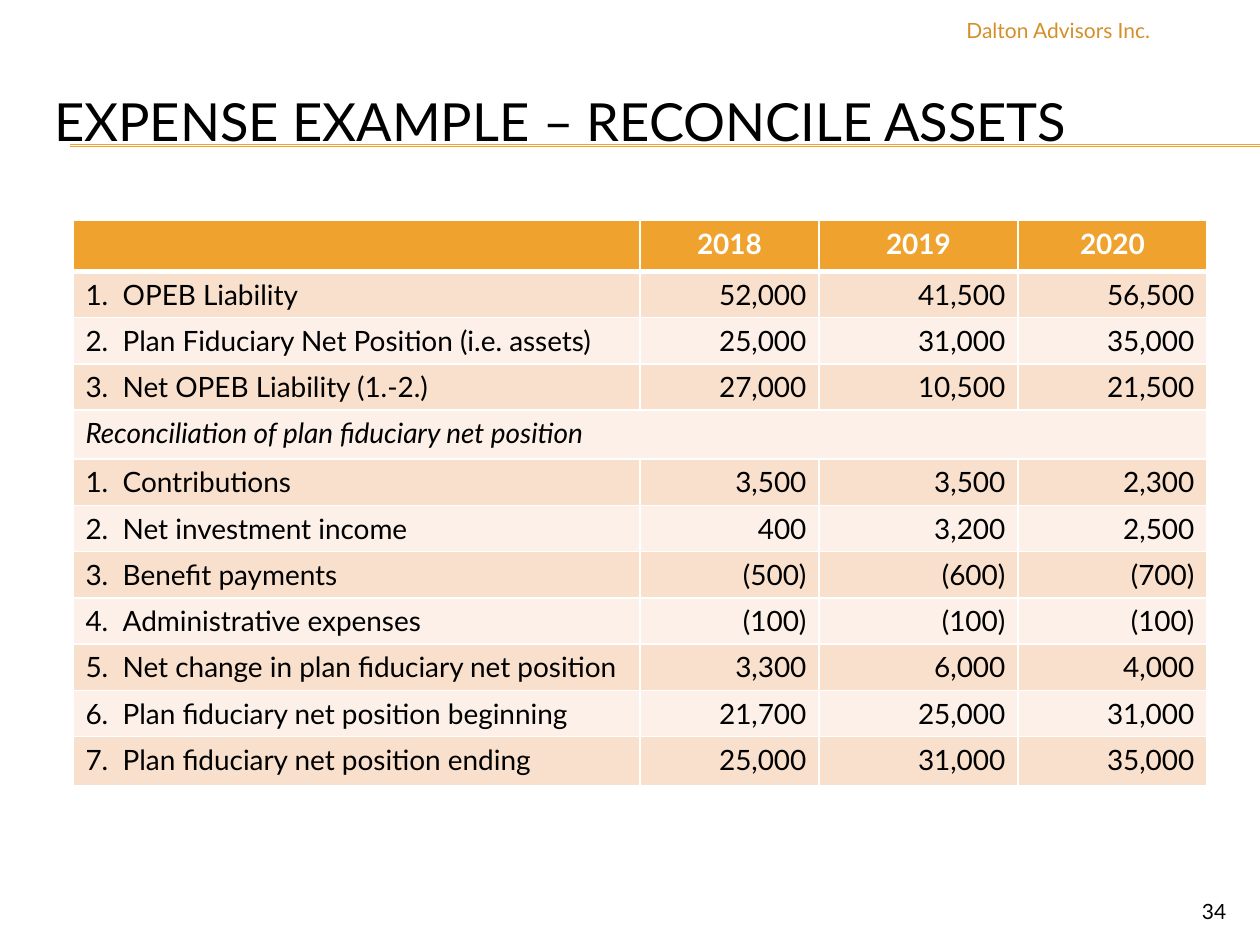
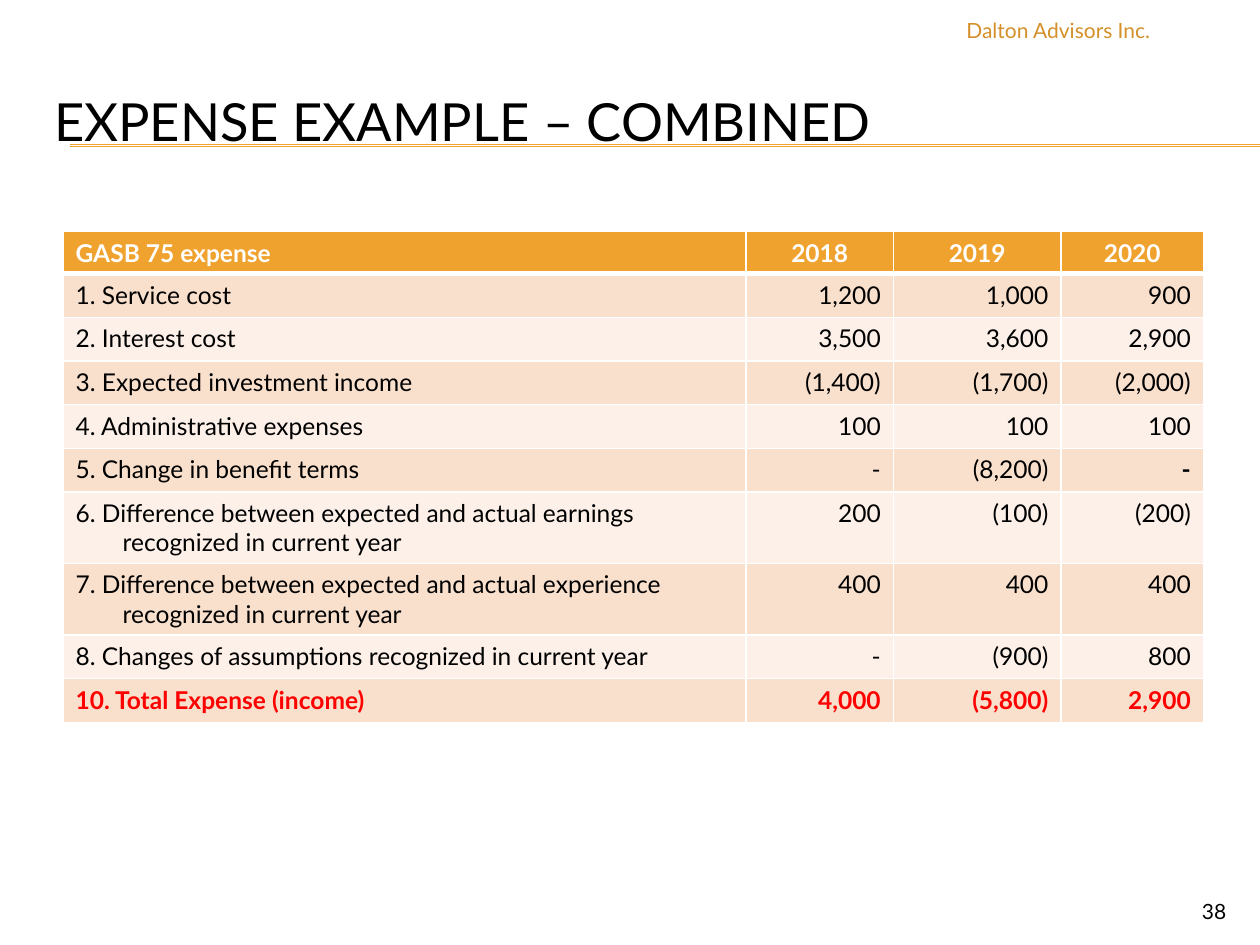
"""Builds two slides of expense example tables."""
from lxml import etree
from pptx import Presentation
from pptx.dml.color import RGBColor
from pptx.enum.shapes import MSO_CONNECTOR
from pptx.enum.text import MSO_ANCHOR, PP_ALIGN
from pptx.oxml.ns import qn
from pptx.util import Cm, Pt

LEFT, CENTER, RIGHT = PP_ALIGN.LEFT, PP_ALIGN.CENTER, PP_ALIGN.RIGHT
TOP, MIDDLE = MSO_ANCHOR.TOP, MSO_ANCHOR.MIDDLE
STRAIGHT = MSO_CONNECTOR.STRAIGHT

BLACK = RGBColor(0x00, 0x00, 0x00)
WHITE = RGBColor(0xFF, 0xFF, 0xFF)
RED = RGBColor(0xFF, 0x00, 0x00)
ORANGE = RGBColor(0xF0, 0xA2, 0x2E)
OCHRE = RGBColor(0xD4, 0x8F, 0x29)
BANDS = (RGBColor(0xF9, 0xE0, 0xCD), RGBColor(0xFC, 0xF0, 0xE8))

FONT = "Lato"
COMPANY = "Dalton Advisors Inc."
SLIDE_WIDTH, SLIDE_HEIGHT = 25.4, 19.05
RULE_LEFT, RULE_TOPS = 1.42, (2.92, 2.95)
TITLE_BOX = (0.84, 1.27, 24.13, 2.34)
COMPANY_BOX = (15.39, 0.23, 8.05, 0.81)
NUMBER_BOX = (22.86, 17.98, 2.11, 0.69)

SLIDES = [
    {
        "title": "EXPENSE EXAMPLE – RECONCILE ASSETS",
        "number": "34",
        "place": (1.47, 4.45),
        "columns": (11.43, 3.61, 4.01, 3.81),
        "row_height": 0.93,
        "special_heights": {0: 1.02, 4: 0.99, 11: 0.99},
        "size": 16,
        "hanging": 0.75,
        "rows": [
            ("", "2018", "2019", "2020"),
            ("1.\tOPEB Liability", "52,000", "41,500", "56,500"),
            ("2.\tPlan Fiduciary Net Position (i.e. assets)", "25,000", "31,000", "35,000"),
            ("3.\tNet OPEB Liability (1.-2.)", "27,000", "10,500", "21,500"),
            ("Reconciliation of plan fiduciary net position",),
            ("1.\tContributions", "3,500", "3,500", "2,300"),
            ("2.\tNet investment income", "400", "3,200", "2,500"),
            ("3.\tBenefit payments", "(500)", "(600)", "(700)"),
            ("4.\tAdministrative expenses", "(100)", "(100)", "(100)"),
            ("5.\tNet change in plan fiduciary net position", "3,300", "6,000", "4,000"),
            ("6.\tPlan fiduciary net position beginning", "21,700", "25,000", "31,000"),
            ("7.\tPlan fiduciary net position ending", "25,000", "31,000", "35,000"),
        ],
        "formats": {(4, 0): {"italic": True}},
    },
    {
        "title": "EXPENSE EXAMPLE – COMBINED",
        "number": "38",
        "place": (1.27, 4.67),
        "columns": (13.77, 2.97, 3.38, 2.87),
        "row_height": 0.88,
        "special_heights": {0: 0.83, 6: 1.44, 7: 1.44},
        "size": 14,
        "hanging": 0.95,
        "rows": [
            ("GASB 75 expense", "2018", "2019", "2020"),
            ("1. Service cost", "1,200", "1,000", "900"),
            ("2. Interest cost", "3,500", "3,600", "2,900"),
            ("3. Expected investment income", "(1,400)", "(1,700)", "(2,000)"),
            ("4. Administrative expenses", "100", "100", "100"),
            ("5. Change in benefit terms", "-", "(8,200)", "-"),
            ("6. Difference between expected and actual earnings recognized in current year",
             "200", "(100)", "(200)"),
            ("7. Difference between expected and actual experience recognized in current year",
             "400", "400", "400"),
            ("8. Changes of assumptions recognized in current year", "-", "(900)", "800"),
            ("10. Total Expense (income)", "4,000", "(5,800)", "2,900"),
        ],
        "formats": {(5, 3): {"bold": True},
                    **{(9, column): {"bold": True, "color": RED} for column in range(4)}},
    },
]


def write(frame, text, size, color=BLACK, align=LEFT, **formats):
    """Put one formatted paragraph into a text frame."""
    paragraph = frame.paragraphs[0]
    paragraph.alignment = align
    run = paragraph.add_run()
    run.text = text
    run.font.color.rgb = color
    for key, value in {"name": FONT, "size": Pt(size), "bold": False, **formats}.items():
        setattr(run.font, key, value)
    return paragraph


def add_label(slide, box, text, size, anchor=TOP, **formats):
    """Add a wrapping text box."""
    frame = slide.shapes.add_textbox(*map(Cm, box)).text_frame
    frame.word_wrap = True
    frame.vertical_anchor = anchor
    write(frame, text, size, **formats)


def add_frame(slide, title, number):
    """Add the rules, title, page number and company name."""
    for top in RULE_TOPS:
        rule = slide.shapes.add_connector(
            STRAIGHT, Cm(RULE_LEFT), Cm(top), Cm(SLIDE_WIDTH), Cm(top))
        rule.line.color.rgb = ORANGE
        rule.line.width = Pt(0.75)
        etree.SubElement(rule._element.spPr, qn("a:effectLst"))
    add_label(slide, TITLE_BOX, title, 30, MIDDLE)
    add_label(slide, NUMBER_BOX, number, 12, align=RIGHT)
    add_label(slide, COMPANY_BOX, COMPANY, 12, color=OCHRE, align=RIGHT)


def set_borders(cell, row):
    """Draw white cell borders, with a thick one under the header."""
    widths = {"lnL": 1, "lnR": 1, "lnT": 3 if row == 1 else 1, "lnB": 3 if row == 0 else 1}
    properties = cell._tc.get_or_add_tcPr()
    for side, width in widths.items():
        border = etree.SubElement(properties, qn(f"a:{side}"), w=str(Pt(width)))
        fill = etree.SubElement(border, qn("a:solidFill"))
        etree.SubElement(fill, qn("a:srgbClr"), val=str(WHITE))


def add_expense_table(slide, content):
    """Add the table with a header row and alternating bands."""
    rows, columns = content["rows"], content["columns"]
    heights = [content["special_heights"].get(row, content["row_height"])
               for row in range(len(rows))]
    table = slide.shapes.add_table(
        len(rows), len(columns), *map(Cm, content["place"]),
        Cm(sum(columns)), Cm(sum(heights))).table
    for column, width in zip(table.columns, columns):
        column.width = Cm(width)
    for row, (values, height) in enumerate(zip(rows, heights)):
        table.rows[row].height = Cm(height)
        for column in range(len(columns)):
            cell = table.cell(row, column)
            set_borders(cell, row)
            cell.fill.solid()
            cell.fill.fore_color.rgb = BANDS[(row - 1) % 2] if row else ORANGE
        if len(values) == 1:
            table.cell(row, 0).merge(table.cell(row, len(columns) - 1))
        for column, value in enumerate(values):
            formats = {"size": content["size"]}
            if row == 0:
                formats.update(bold=True, color=WHITE)
            if column:
                formats["align"] = RIGHT if row else CENTER
            formats.update(content["formats"].get((row, column), {}))
            paragraph = write(table.cell(row, column).text_frame, value, **formats)
            if column == 0 and row and len(values) > 1:
                indent = Cm(content["hanging"])
                for key, length in {"marL": indent, "indent": -indent}.items():
                    paragraph._p.get_or_add_pPr().set(key, str(length))


def main():
    """Build and save the slides."""
    deck = Presentation()
    deck.slide_width, deck.slide_height = Cm(SLIDE_WIDTH), Cm(SLIDE_HEIGHT)
    for content in SLIDES:
        slide = deck.slides.add_slide(deck.slide_layouts[6])
        add_frame(slide, content["title"], content["number"])
        add_expense_table(slide, content)
    deck.save("out.pptx")


if __name__ == "__main__":
    main()
